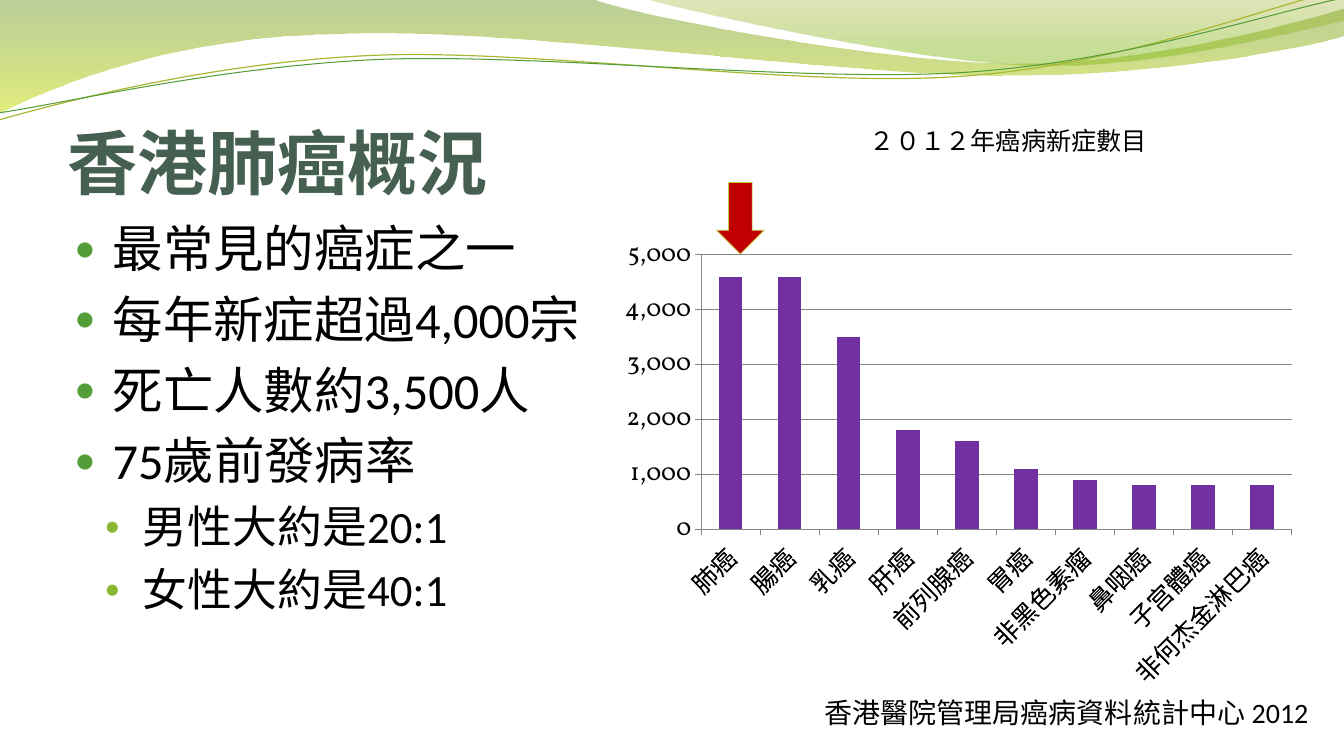
import math
from dataclasses import dataclass
from typing import Any, Optional

import lxml.etree
import pptx
import pptx.chart.data
import pptx.dml.color
import pptx.enum.chart
import pptx.enum.shapes
import pptx.enum.text
import pptx.oxml.ns
import pptx.util

RGBColor = pptx.dml.color.RGBColor
Inches = pptx.util.Inches
Pt = pptx.util.Pt
qn = pptx.oxml.ns.qn
Align = pptx.enum.text.PP_ALIGN
Anchor = pptx.enum.text.MSO_ANCHOR

BLACK = RGBColor(0x00, 0x00, 0x00)
WHITE = RGBColor(0xFF, 0xFF, 0xFF)
TITLE_GREEN = RGBColor(0x45, 0x5F, 0x51)
GREEN = RGBColor(0x54, 0x9E, 0x39)
LIGHT_GREEN = RGBColor(0x8A, 0xB8, 0x33)
OLIVE = RGBColor(0xA9, 0xB7, 0x33)
WAVE_DARK = RGBColor(0x69, 0x92, 0x1C)
WAVE_YELLOW = RGBColor(0xCC, 0xE1, 0x0F)
WAVE_OLIVE = RGBColor(0x9B, 0xAA, 0x1A)
WAVE_GREEN = RGBColor(0x81, 0xBA, 0x16)
PURPLE = RGBColor(0x70, 0x30, 0xA0)
GRID_GREY = RGBColor(0x86, 0x86, 0x86)
RED = RGBColor(0xC0, 0x00, 0x00)
ARROW_EDGE = RGBColor(0xC0, 0xCF, 0x3A)

LINE_TILT = 357.3
Point = tuple[float, float]


@dataclass
class Stop:
    position: float
    color: RGBColor
    opacity: int


@dataclass
class Wave:
    start: Point
    segments: list[tuple[float, ...]]  # two numbers: line; six: Bézier curve
    stops: Optional[list[Stop]] = None
    line: Optional[RGBColor] = None
    width: float = 0
    pivot: Optional[Point] = None  # centre of a tilted wave


@dataclass
class Level:
    size: int
    indent: float
    bullet_color: RGBColor
    bullet_percent: int


@dataclass
class Label:
    text: str
    box: tuple[float, float, float, float]
    size: int
    align: Align = Align.LEFT
    color: RGBColor = BLACK
    bold: bool = False
    frame: Optional[dict[str, Any]] = None


WAVES = [
    Wave((0, 0), [(5.87, -0.01), (6.34, 0.17, 8.84, 0.63, 10.11, 0.63),
                  (11.37, 0.63, 12.77, 0.26, 13.33, 0.09), (13.34, 0.36),
                  (13.11, 0.44, 11.59, 0.76, 9.94, 0.75),
                  (8.29, 0.75, 5.09, 0.28, 3.43, 0.34),
                  (1.72, 0.36, 0.61, 0.83, -0.02, 1.13), (0, 0)],
         stops=[Stop(0, WAVE_DARK, 45), Stop(1, WAVE_YELLOW, 55)]),
    Wave((6.38, -0.01), [(6.79, 0.11, 9.09, 0.62, 10.25, 0.65),
                         (11.4, 0.69, 12.82, 0.32, 13.33, 0.21), (13.33, 0), (6.38, -0.01)],
         stops=[Stop(0, WAVE_OLIVE, 30), Stop(0.8, WAVE_GREEN, 45)]),
    Wave((-0.01, 1.19), [(0.63, 1.01, 2.1, 0.62, 3.69, 0.55),
                         (5.27, 0.48, 7.89, 0.87, 9.49, 0.76),
                         (11.1, 0.66, 12.51, 0.08, 13.3, -0.1)],
         line=OLIVE, width=0.85, pivot=(6.65, 0.57)),
    Wave((-0.01, 1.12), [(0.62, 1.03, 2.18, 0.66, 3.77, 0.59),
                         (5.37, 0.53, 7.96, 0.82, 9.55, 0.72),
                         (11.14, 0.62, 12.55, 0.14, 13.33, -0.02)],
         line=GREEN, width=0.75, pivot=(6.67, 0.59)),
]

LABELS = [
    Label("香港肺癌概況", (0.67, 0.77, 12, 1.25), 50, color=TITLE_GREEN, bold=True,
          frame={"vertical_anchor": Anchor.BOTTOM, "margin_left": 0,
                 "margin_right": 0, "margin_bottom": 0}),
    Label("２０１２年癌病新症數目", (7.34, 1.19, 5.33, 0.4), 18, Align.CENTER),
    Label("香港醫院管理局癌病資料統計中心 2012", (4.16, 6.85, 8.92, 0.44), 20, Align.RIGHT),
]

FACT = Level(36, 0.38, GREEN, 85)
DETAIL = Level(32, 0.68, LIGHT_GREEN, 70)
FACTS = [("最常見的癌症之一", FACT), ("每年新症超過4,000宗", FACT), ("死亡人數約3,500人", FACT),
         ("75歲前發病率", FACT), ("男性大約是20:1", DETAIL), ("女性大約是40:1", DETAIL)]

NEW_CASES = {"肺癌": 4600, "腸癌": 4600, "乳癌": 3500, "肝癌": 1800, "前列腺癌": 1600,
             "胃癌": 1100, "非黑色素瘤": 900, "鼻咽癌": 800, "子宫體癌": 800, "非何杰金淋巴癌": 800}
PLOT_AREA = {"x": 0.098, "y": 0.063, "w": 0.839, "h": 0.562}


def apply(target: Any, values: dict[str, Any]) -> None:
    for name, value in values.items():
        setattr(target, name, value)


def add_xml(parent: Any, tag: str, **attributes: Any) -> Any:
    return lxml.etree.SubElement(parent, qn(tag), {k: str(v) for k, v in attributes.items()})


def place(numbers: tuple[float, ...], pivot: Optional[Point]) -> list[tuple[int, int]]:
    """Pair the numbers into points, with the tilt about the pivot taken out."""
    turn = math.radians(360 - LINE_TILT) if pivot else 0
    px, py = pivot or (0, 0)
    return [(Inches(px + (x - px) * math.cos(turn) - (y - py) * math.sin(turn)),
             Inches(py + (x - px) * math.sin(turn) + (y - py) * math.cos(turn)))
            for x, y in zip(numbers[::2], numbers[1::2])]


def draw_wave(shapes: Any, wave: Wave) -> None:
    segments = [place(segment, wave.pivot) for segment in wave.segments]
    builder = shapes.build_freeform(*place(wave.start, wave.pivot)[0])
    builder.add_line_segments([points[-1] for points in segments], close=wave.stops is not None)
    band = builder.convert_to_shape()
    band.shadow.inherit = False

    # Bend the straight segments into curves
    for step, points in zip(list(band._element.iter(qn("a:lnTo"))), segments):
        if len(points) == 3:
            curve = lxml.etree.Element(qn("a:cubicBezTo"))
            for x, y in points:
                add_xml(curve, "a:pt", x=x - band.left, y=y - band.top)
            step.getparent().replace(step, curve)

    if wave.stops is None:
        band.rotation = LINE_TILT
        band.fill.background()
        band.line.color.rgb = wave.line
        band.line.width = Pt(wave.width)
        return
    band.line.fill.background()
    band.fill.gradient()
    band.fill.gradient_angle = 270
    for target, stop in zip(band.fill.gradient_stops, wave.stops):
        target.position = stop.position
        target.color.rgb = stop.color
    for color, stop in zip(band._element.iter(qn("a:srgbClr")), wave.stops):
        add_xml(color, "a:alpha", val=stop.opacity * 1000)


def write(paragraph: Any, text: str, size: int, color: RGBColor = BLACK, bold: bool = False) -> None:
    run = paragraph.add_run()
    run.text = text
    apply(run.font, {"name": "Calibri", "size": Pt(size), "bold": bold})
    run.font.color.rgb = color


def draw_label(shapes: Any, label: Label) -> None:
    frame = shapes.add_textbox(*map(Inches, label.box)).text_frame
    apply(frame, {"word_wrap": True, **(label.frame or {})})
    frame.paragraphs[0].alignment = label.align
    write(frame.paragraphs[0], label.text, label.size, label.color, label.bold)


def draw_facts(shapes: Any) -> None:
    frame = shapes.add_textbox(Inches(0.64), Inches(2.11), Inches(6.14), Inches(4.8)).text_frame
    frame.word_wrap = True
    for index, (text, level) in enumerate(FACTS):
        paragraph = frame.add_paragraph() if index else frame.paragraphs[0]
        apply(paragraph, {"level": int(level is DETAIL), "space_before": Pt(level.size * 0.2)})
        properties = paragraph._p.get_or_add_pPr()
        properties.set("marL", str(Inches(level.indent)))
        properties.set("indent", str(-Inches(0.38)))
        add_xml(add_xml(properties, "a:buClr"), "a:srgbClr", val=level.bullet_color)
        add_xml(properties, "a:buSzPct", val=level.bullet_percent * 1000)
        add_xml(properties, "a:buFont", typeface="Calibri")
        add_xml(properties, "a:buChar", char="•")
        write(paragraph, text, level.size)


def draw_cases(shapes: Any) -> None:
    data = pptx.chart.data.CategoryChartData(number_format="#,##0")
    data.categories = list(NEW_CASES)
    data.add_series("Series 1", list(NEW_CASES.values()))
    chart = shapes.add_chart(pptx.enum.chart.XL_CHART_TYPE.COLUMN_CLUSTERED, Inches(6.2),
                             Inches(2.22), Inches(7.06), Inches(4.85), data).chart
    apply(chart, {"has_legend": False, "has_title": False})
    apply(chart.font, {"size": Pt(18), "name": "Vollkorn"})
    chart.font.color.rgb = BLACK
    apply(chart.plots[0], {"gap_width": 150, "vary_by_categories": False})
    bars = chart.plots[0].series[0].format
    bars.fill.solid()
    bars.fill.fore_color.rgb = PURPLE

    # Axes
    cancers, cases = chart.category_axis, chart.value_axis
    apply(cases, {"major_unit": 1000, "has_major_gridlines": True})
    apply(cases.tick_labels, {"number_format": "#,##0", "number_format_is_linked": False})
    for axis in (cancers, cases):
        axis.major_tick_mark = pptx.enum.chart.XL_TICK_MARK.OUTSIDE
    for line in (cancers.format.line, cases.format.line, cases.major_gridlines.format.line):
        line.color.rgb = GRID_GREY
        line.width = Pt(0.75)
    apply(cancers.tick_labels.font, {"name": "Noto Sans CJK SC", "size": Pt(18)})

    # Plot position
    plot_area = chart._chartSpace.chart.plotArea
    for old in plot_area.findall(qn("c:layout")):
        plot_area.remove(old)
    layout = lxml.etree.Element(qn("c:layout"))
    plot_area.insert(0, layout)
    manual = add_xml(layout, "c:manualLayout")
    add_xml(manual, "c:layoutTarget", val="inner")
    for side in "xy":
        add_xml(manual, f"c:{side}Mode", val="edge")
    for side, share in PLOT_AREA.items():
        add_xml(manual, f"c:{side}", val=share)

    # White chart background and border
    background = lxml.etree.Element(qn("c:spPr"))
    chart._chartSpace.chart.addnext(background)
    border = lxml.etree.Element(qn("a:ln"), w=str(Pt(0.75)))
    for parent in (background, border):
        add_xml(add_xml(parent, "a:solidFill"), "a:srgbClr", val=WHITE)
    background.append(border)


def draw_arrow(shapes: Any) -> None:
    arrow = shapes.add_shape(pptx.enum.shapes.MSO_SHAPE.DOWN_ARROW, Inches(7.11), Inches(1.81),
                             Inches(0.47), Inches(0.71))
    arrow.shadow.inherit = False
    arrow.fill.solid()
    arrow.fill.fore_color.rgb = RED
    arrow.line.color.rgb = ARROW_EDGE
    arrow.line.width = Pt(0.5)


def main() -> None:
    deck = pptx.Presentation()
    apply(deck, {"slide_width": Inches(40 / 3), "slide_height": Inches(7.5)})
    shapes = deck.slides.add_slide(deck.slide_layouts[6]).shapes
    for wave in WAVES:
        draw_wave(shapes, wave)
    draw_facts(shapes)
    draw_cases(shapes)
    for label in LABELS:
        draw_label(shapes, label)
    draw_arrow(shapes)
    deck.save("out.pptx")


if __name__ == "__main__":
    main()
